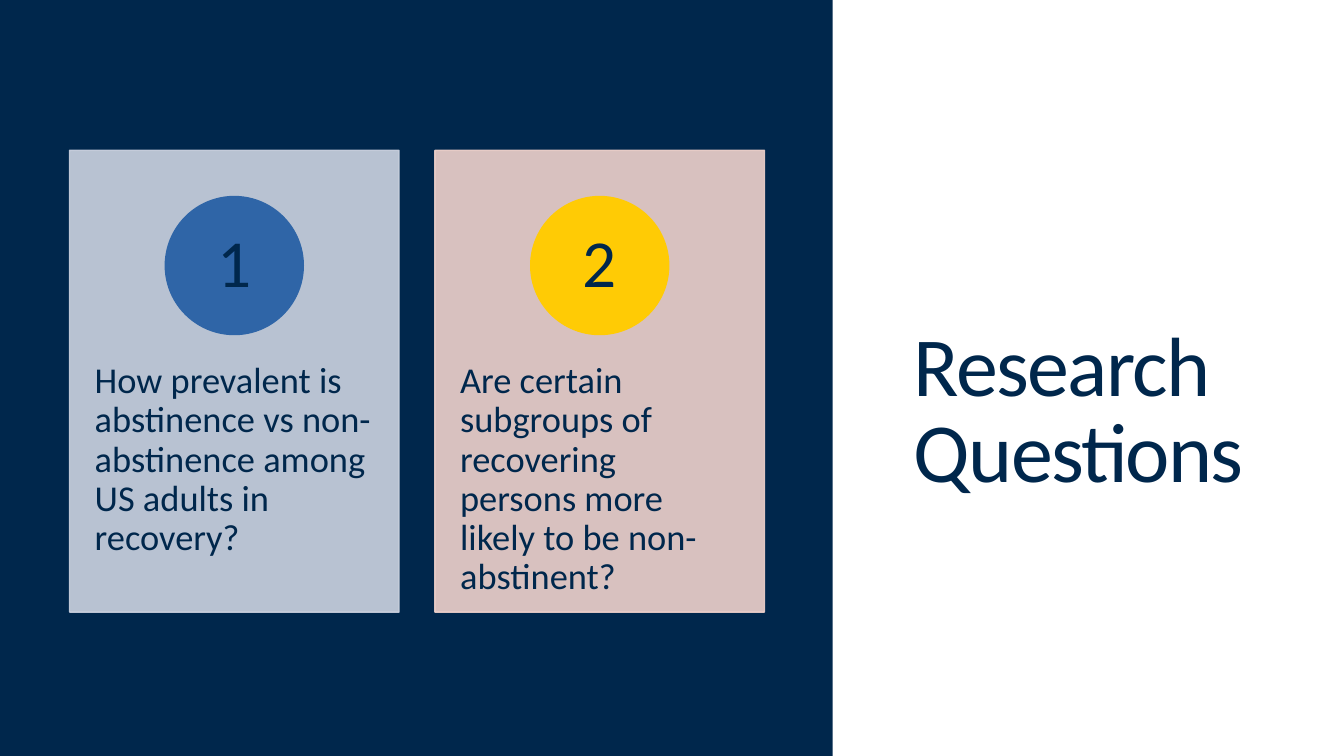
import lxml.etree
import pptx
import pptx.dml.color
import pptx.enum.shapes
import pptx.enum.text
import pptx.oxml.ns
import pptx.util

Pt = pptx.util.Pt
Shapes = pptx.enum.shapes.MSO_SHAPE
Anchor = pptx.enum.text.MSO_ANCHOR
Align = pptx.enum.text.PP_ALIGN

COLORS = {
    "navy": "00274C",
    "white": "FFFFFF",
    "pale blue": "CDD3E1",
    "pale red": "F0D2CC",
    "blue": "2F65A7",
    "yellow": "FFCB05",
}


def rgb(name):
    return pptx.dml.color.RGBColor.from_string(COLORS[name])


def add_text(slide, box, text, size, spacing, align, frame_format):
    text_box = slide.shapes.add_textbox(*map(Pt, box))
    frame = text_box.text_frame
    frame.word_wrap = True
    for name, value in frame_format.items():
        setattr(frame, name, value)
    paragraph = frame.paragraphs[0]
    paragraph.line_spacing = spacing
    paragraph.alignment = align
    run = paragraph.add_run()
    run.text = text
    run.font.name = "Calibri"
    run.font.size = Pt(size)
    run.font.color.rgb = rgb("navy")
    return text_box


def add_filled(slide, kind, box, color, outlined=True):
    shape = slide.shapes.add_shape(kind, *map(Pt, box))
    shape.shadow.inherit = False
    shape.fill.solid()
    shape.fill.fore_color.rgb = rgb(color)
    if outlined:
        shape.line.color.rgb = rgb(color)
        shape.line.width = Pt(1)
    else:
        shape.line.fill.background()
    return shape


presentation = pptx.Presentation()
presentation.slide_width = Pt(960)
presentation.slide_height = Pt(540)
slide = presentation.slides.add_slide(presentation.slide_layouts[6])
slide.background.fill.solid()
slide.background.fill.fore_color.rgb = rgb("navy")

# Title panel
add_filled(slide, Shapes.RECTANGLE, (594.7, 0, 365.3, 540), "white", outlined=False)
title = add_text(slide, (645.8, 50.4, 263.5, 490.3), "Research Questions", 60, 0.85,
                 Align.LEFT, {"vertical_anchor": Anchor.MIDDLE})
for run_properties in title.element.xpath(".//a:rPr"):
    run_properties.set("spc", "-120")

# Question cards
CARD_LEFT, CARD_TOP, CARD_WIDTH, CARD_HEIGHT = 49.7, 107.4, 235.4, 329.8
CARD_PITCH = 261
CIRCLE_SIZE, NUMBER_SIZE = 98.6, 69.8
CIRCLE_MIDDLE = 189.7

question_format = {
    "vertical_anchor": Anchor.TOP,
    "margin_left": Pt(18), "margin_right": Pt(18),
    "margin_top": Pt(26), "margin_bottom": Pt(26),
}
number_format = {
    "vertical_anchor": Anchor.MIDDLE,
    "margin_left": Pt(8), "margin_right": Pt(8),
    "margin_top": Pt(1), "margin_bottom": Pt(1),
}
questions = [
    ("How prevalent is abstinence vs non-abstinence among US adults in recovery?",
     "pale blue", "blue"),
    ("Are certain subgroups of recovering persons more likely to be non-abstinent?",
     "pale red", "yellow"),
]

for index, (question, card_color, circle_color) in enumerate(questions):
    left = CARD_LEFT + index * CARD_PITCH
    center = left + CARD_WIDTH / 2
    card = add_filled(slide, Shapes.RECTANGLE,
                      (left, CARD_TOP, CARD_WIDTH, CARD_HEIGHT), card_color)
    for color in card.element.xpath("./p:spPr//a:srgbClr"):
        lxml.etree.SubElement(color, pptx.oxml.ns.qn("a:alpha"), val="90000")
    add_text(slide, (left, 232.6, CARD_WIDTH, 198), question, 26, 0.9,
             Align.LEFT, question_format)
    add_filled(slide, Shapes.OVAL,
               (center - CIRCLE_SIZE / 2, CIRCLE_MIDDLE - CIRCLE_SIZE / 2,
                CIRCLE_SIZE, CIRCLE_SIZE), circle_color)
    add_text(slide, (center - NUMBER_SIZE / 2, CIRCLE_MIDDLE - NUMBER_SIZE / 2,
                     NUMBER_SIZE, NUMBER_SIZE), str(index + 1), 48, 0.9,
             Align.CENTER, number_format)

presentation.save("out.pptx")
